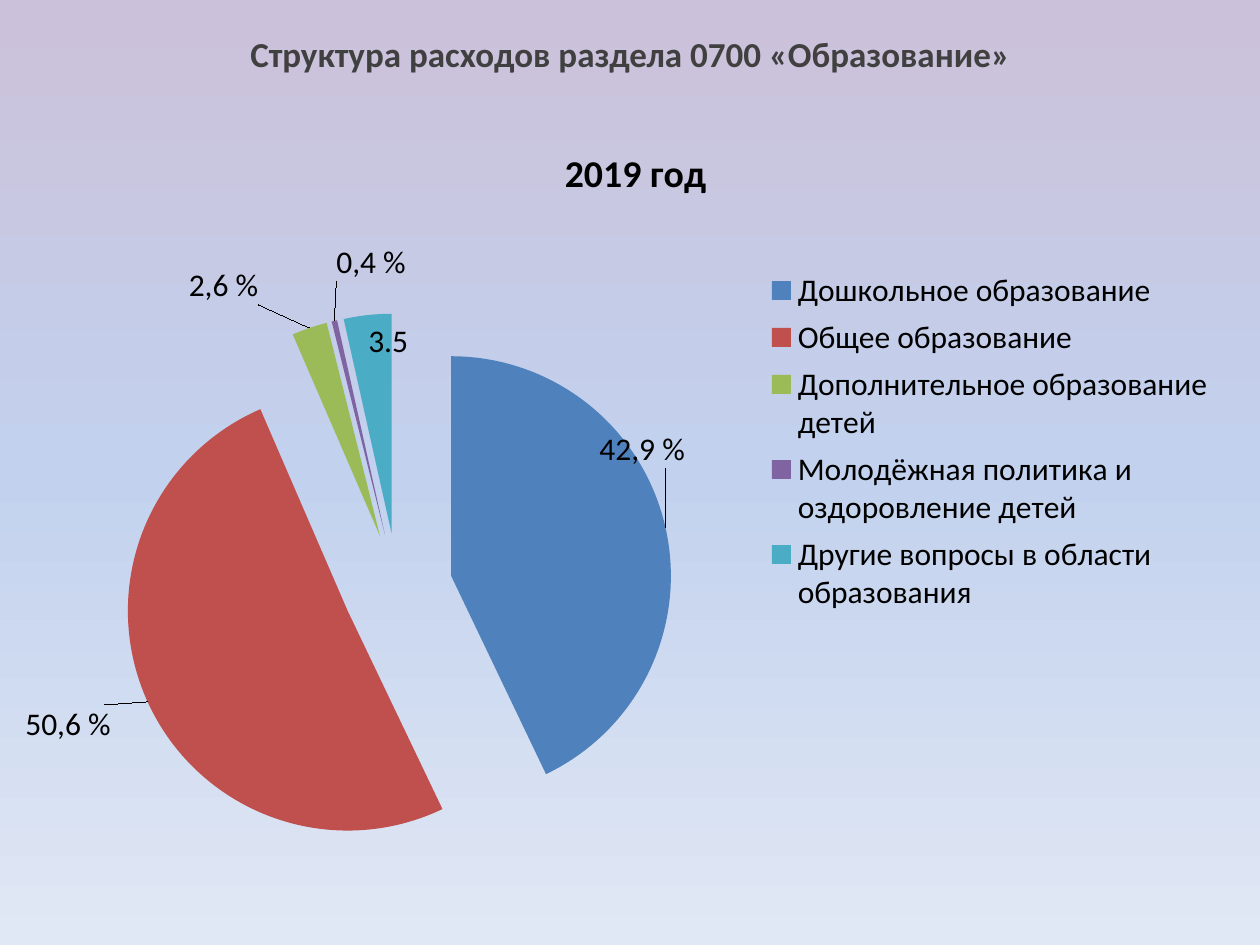
from lxml import etree
from pptx import Presentation
from pptx.chart.data import CategoryChartData
from pptx.dml.color import RGBColor
from pptx.enum.chart import XL_CHART_TYPE as ChartType
from pptx.enum.chart import XL_LABEL_POSITION as LabelPos
from pptx.enum.chart import XL_LEGEND_POSITION as LegendPos
from pptx.enum.text import PP_ALIGN
from pptx.oxml import parse_xml
from pptx.oxml.ns import qn
from pptx.util import Cm, Pt

FONT = "Calibri"
COLORS = {"heading": "404040", "text": "000000",
          "top": "CCC1DA", "middle": "C2D1ED", "bottom": "E1E8F5"}
CHART_NS = "http://schemas.openxmlformats.org/drawingml/2006/chart"
YEAR = "2019 год"
SECTIONS = [
    ("Дошкольное образование", 42.9, "4F81BD", "42,9 %", (-0.06, -0.07)),
    ("Общее образование", 50.6, "C0504D", "50,6 %", (-0.03, 0)),
    ("Дополнительное образование детей", 2.6, "9BBB59", "2,6 %", (-0.04, -0.02)),
    ("Молодёжная политика и оздоровление детей", 0.4, "8064A2", "0,4 %", (0.06, -0.04)),
    ("Другие вопросы в области образования", 3.5, "4BACC6", None, None),
]


def style_font(font, size, color, bold=False):
    """Set the face, size, colour and weight of a font."""
    font.name, font.size, font.bold = FONT, Pt(size), bold
    font.color.rgb = RGBColor.from_string(COLORS[color])


def set_background(page):
    """Fill the page with a three-stop vertical gradient."""
    fill = page.background.fill
    fill.gradient()
    fill.gradient_angle = 270
    stop_list = page.background._cSld.find(".//" + qn("a:gsLst"))
    for stop in list(stop_list):
        stop_list.remove(stop)
    for position, name in enumerate(("top", "middle", "bottom")):
        stop = etree.SubElement(stop_list, qn("a:gs"), pos=str(position * 50000))
        etree.SubElement(stop, qn("a:srgbClr"), val=COLORS[name])


def add_heading(page, text):
    """Add the centred heading of the page."""
    box = page.shapes.add_textbox(Cm(0.71), Cm(0.53), Cm(24), Cm(1.4))
    frame = box.text_frame
    frame.word_wrap = True
    para = frame.paragraphs[0]
    para.text = text
    para.alignment = PP_ALIGN.CENTER
    para.space_before = Pt(4)
    style_font(para.font, 20, "heading", bold=True)


def set_layout(element, index, **values):
    """Give a chart element a manual layout at the given child index."""
    for old in element.findall(qn("c:layout")):
        element.remove(old)
    modes = "".join(f'<c:{key} val="edge"/>' for key in ("xMode", "yMode")) if "w" in values else ""
    items = "".join(f'<c:{key} val="{value}"/>' for key, value in values.items())
    element.insert(index, parse_xml(
        f'<c:layout xmlns:c="{CHART_NS}"><c:manualLayout>{modes}{items}'
        "</c:manualLayout></c:layout>"))


def label_slice(point, text, offset):
    """Write a slice's label and move it away from its usual place."""
    label = point.data_label
    para = label.text_frame.paragraphs[0]
    para.text = text
    style_font(para.font, 18, "text")
    label.position = LabelPos.OUTSIDE_END
    set_layout(label._get_or_add_dLbl(), 1, x=offset[0], y=offset[1])


def style_slices(series):
    """Explode, colour and label the slices."""
    labels = series.data_labels
    labels.show_value = True
    labels.position = LabelPos.INSIDE_END
    for index, (_, _, color, text, offset) in enumerate(SECTIONS):
        point = series.points[index]
        point.format.fill.solid()
        point.format.fill.fore_color.rgb = RGBColor.from_string(color)
        if text:
            label_slice(point, text, offset)
    first_point = series._element.find(qn("c:dPt"))
    first_point.addprevious(parse_xml(f'<c:explosion xmlns:c="{CHART_NS}" val="25"/>'))


def add_pie(page):
    """Add the pie chart of spending by section."""
    data = CategoryChartData()
    data.categories = [section[0] for section in SECTIONS]
    data.add_series(YEAR, [section[1] for section in SECTIONS])
    chart = page.shapes.add_chart(
        ChartType.PIE, Cm(0.51), Cm(2.34), Cm(24.61), Cm(16.41), data).chart
    style_font(chart.font, 18, "text")
    para = chart.chart_title.text_frame.paragraphs[0]
    para.text = YEAR
    style_font(para.font, 21.6, "text", bold=True)
    chart.has_legend = True
    chart.legend.position = LegendPos.CORNER
    chart.legend.include_in_layout = False
    set_layout(chart.legend._element, 1, x=0.6, y=0.18, w=0.38, h=0.44)
    plot = chart.plots[0]
    plot.vary_by_categories = True
    set_layout(plot._element.getparent(), 0,
               layoutTarget="inner", x=0.08, y=0.24, w=0.45, h=0.68)
    style_slices(plot.series[0])


def main():
    """Build the slide and save the deck."""
    deck = Presentation()
    deck.slide_width, deck.slide_height = Cm(25.4), Cm(19.05)
    page = deck.slides.add_slide(deck.slide_layouts[6])
    set_background(page)
    add_heading(page, "Структура расходов раздела 0700 «Образование»")
    add_pie(page)
    deck.save("out.pptx")


if __name__ == "__main__":
    main()
